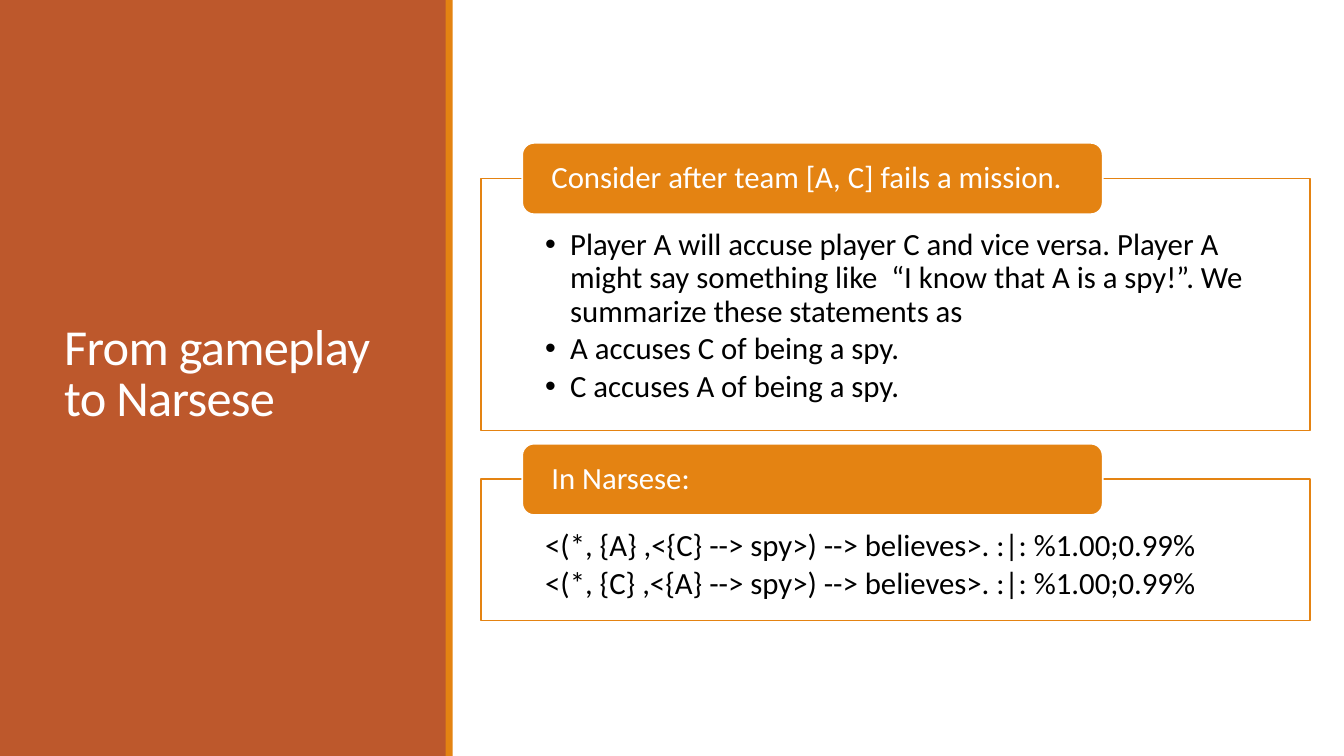
from lxml.etree import SubElement
from pptx import Presentation
from pptx.dml.color import RGBColor
from pptx.enum.shapes import MSO_SHAPE
from pptx.enum.text import MSO_ANCHOR, PP_ALIGN
from pptx.oxml.ns import qn
from pptx.util import Cm, Pt

TITLE = "From gameplay to Narsese"
SECTIONS = [
    {
        "heading": "Consider after team [A, C] fails a mission.",
        "lines": [
            "Player A will accuse player C and vice versa. Player A might say "
            "something like  “I know that A is a spy!”. We summarize these statements as",
            "A accuses C of being a spy.",
            "C accuses A of being a spy.",
        ],
        "bulleted": True,
        "height": 6.35,
    },
    {
        "heading": "In Narsese:",
        "lines": [
            "<(*, {A} ,<{C} --> spy>) --> believes>. :|: %1.00;0.99%",
            "<(*, {C} ,<{A} --> spy>) --> believes>. :|: %1.00;0.99%",
        ],
        "bulleted": False,
        "height": 3.56,
    },
]

FONT = "Calibri"
RUST, ORANGE, WHITE, BLACK = "BD582C", "E48312", "FFFFFF", "000000"
PAGE_WIDTH, PAGE_HEIGHT = 33.87, 19.05
SIDEBAR_WIDTH, STRIPE_LEFT, STRIPE_WIDTH = 11.25, 11.23, 0.18
PANEL_LEFT, PANEL_WIDTH = 12.12, 20.9
TAB_LEFT, TAB_WIDTH, TAB_HEIGHT = 13.16, 14.63, 1.8
FIRST_TAB_TOP, SECTION_GAP = 3.6, 0.33
HANGING_INDENT = 0.63


def paint(target, color):
    target.solid()
    target.fore_color.rgb = RGBColor.from_string(color)


def add_block(page, kind, left, top, width, height, fill, line=None):
    block = page.shapes.add_shape(kind, Cm(left), Cm(top), Cm(width), Cm(height))
    block.shadow.inherit = False
    paint(block.fill, fill)
    if line:
        paint(block.line.fill, line)
        block.line.width = Pt(1.25)
    else:
        block.line.fill.background()
    return block


def write(box, lines, size, color, anchor, insets, spacing, after=0):
    frame = box.text_frame
    frame.word_wrap = True
    frame.vertical_anchor = anchor
    frame.margin_left, frame.margin_top, frame.margin_right, frame.margin_bottom = map(Cm, insets)
    frame.text = "\n".join(lines)
    for para in frame.paragraphs:
        para.alignment = PP_ALIGN.LEFT
        para.line_spacing = spacing
        para.space_after = Pt(after)
        for span in para.runs:
            span.font.name = FONT
            span.font.size = Pt(size)
            paint(span.font.fill, color)
    return frame.paragraphs


def hang(para, bulleted):
    properties = para._p.get_or_add_pPr()
    properties.set("marL", str(Cm(HANGING_INDENT)))
    properties.set("indent", str(-Cm(HANGING_INDENT)))
    if bulleted:
        SubElement(properties, qn("a:buFont")).set("typeface", "Arial")
        SubElement(properties, qn("a:buChar")).set("char", "•")
    else:
        SubElement(properties, qn("a:buNone"))


def add_section(page, section, tab_top):
    panel_top = tab_top + TAB_HEIGHT / 2
    panel = add_block(page, MSO_SHAPE.RECTANGLE, PANEL_LEFT, panel_top,
                      PANEL_WIDTH, section["height"], WHITE, ORANGE)
    for para in write(panel, section["lines"], 22, BLACK, MSO_ANCHOR.TOP,
                      (1.62, 1.27, 1.62, 0.43), 0.9, 3.3):
        hang(para, section["bulleted"])
    tab = add_block(page, MSO_SHAPE.ROUNDED_RECTANGLE, TAB_LEFT, tab_top,
                    TAB_WIDTH, TAB_HEIGHT, ORANGE, WHITE)
    write(tab, [section["heading"]], 22, WHITE, MSO_ANCHOR.MIDDLE, (0.65, 0, 0.65, 0), 0.9)
    return panel_top + section["height"] + SECTION_GAP


def main():
    deck = Presentation()
    deck.slide_width, deck.slide_height = Cm(PAGE_WIDTH), Cm(PAGE_HEIGHT)
    page = deck.slides.add_slide(deck.slide_layouts[6])

    add_block(page, MSO_SHAPE.RECTANGLE, 0, 0, SIDEBAR_WIDTH, PAGE_HEIGHT, RUST)
    title = page.shapes.add_textbox(Cm(1.37), Cm(1.45), Cm(8.56), Cm(16.03))
    for para in write(title, [TITLE], 36, WHITE, MSO_ANCHOR.MIDDLE,
                      (0.25, 0.13, 0.25, 0.13), 0.85):
        for span in para.runs:
            span.font._element.set("spc", "-50")
    add_block(page, MSO_SHAPE.RECTANGLE, STRIPE_LEFT, 0, STRIPE_WIDTH, PAGE_HEIGHT, ORANGE)

    tab_top = FIRST_TAB_TOP
    for section in SECTIONS:
        tab_top = add_section(page, section, tab_top)
    deck.save("out.pptx")


if __name__ == "__main__":
    main()
